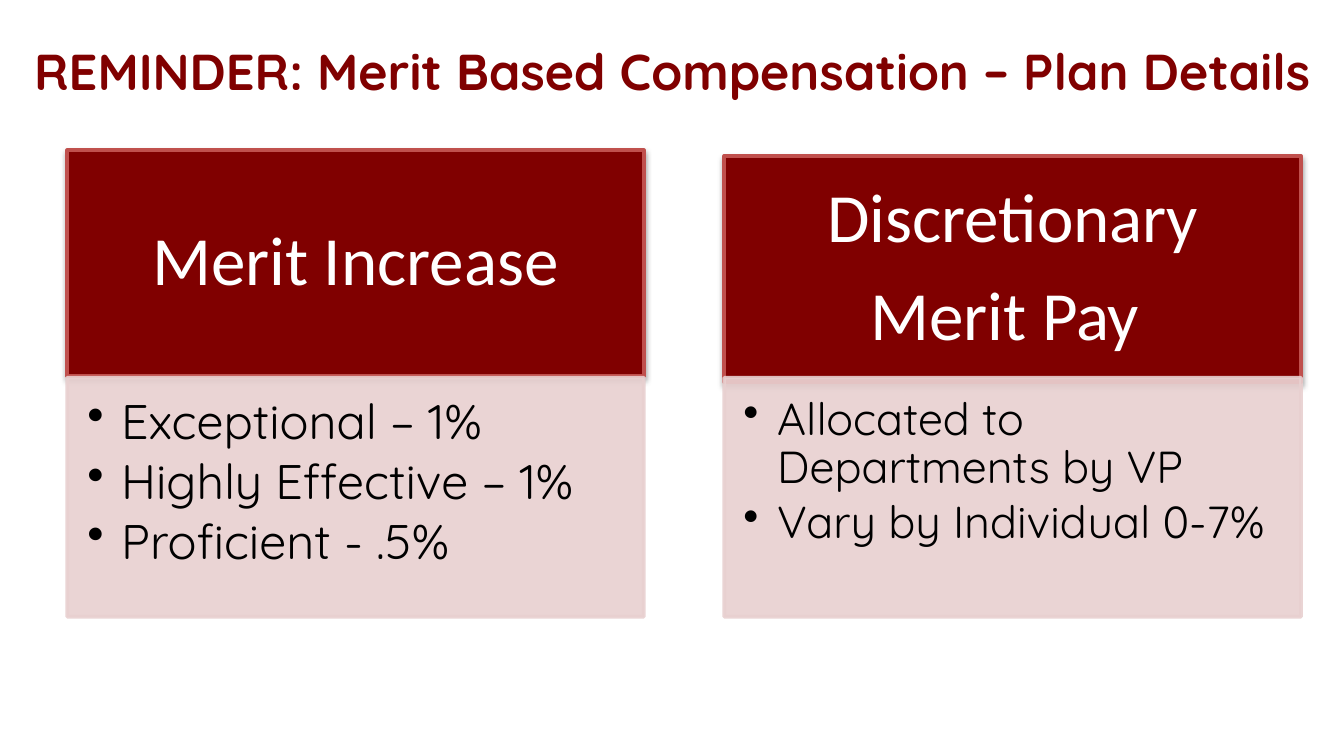
"""Build the merit based compensation slide with its two plan panels."""
from dataclasses import dataclass

import lxml.etree
import pptx
import pptx.dml.color
import pptx.enum.shapes
import pptx.enum.text
import pptx.oxml.ns
import pptx.util
from pptx.util import Cm

RGB = pptx.dml.color.RGBColor
ALIGN = pptx.enum.text.PP_ALIGN
ANCHOR = pptx.enum.text.MSO_ANCHOR
qn = pptx.oxml.ns.qn


@dataclass(frozen=True)
class Theme:
    maroon: RGB = RGB(0x80, 0x00, 0x00)
    border: RGB = RGB(0xC0, 0x50, 0x4D)
    blush: RGB = RGB(0xE8, 0xD0, 0xD0)
    white: RGB = RGB(0xFF, 0xFF, 0xFF)
    black: RGB = RGB(0x00, 0x00, 0x00)
    heading_font: str = "Calibri"
    body_font: str = "Quicksand"
    title_size: float = 27
    heading_size: float = 37
    line_width: float = 2
    line_spacing: float = 0.9


@dataclass(frozen=True)
class Panel:
    left: float
    heading_top: float
    heading: tuple[str, ...]
    details: tuple[str, ...]
    detail_size: float
    detail_insets: tuple[float, float, float, float]


THEME = Theme()
PANEL_WIDTH = 10.9
HEADING_HEIGHT = 4.27
DETAILS_TOP = 7.14
DETAILS_HEIGHT = 4.52
HEADING_INSETS = (0.74, 0.41, 0.74, 0.41)
BULLET_INDENT = 0.64

PANELS = (
    Panel(1.27, 2.84, ("Merit Increase",),
          ("Exceptional – 1%", "Highly Effective – 1%", "Proficient - .5%"),
          26, (0.38, 0.38, 0.51, 0.58)),
    Panel(13.69, 2.95, ("Discretionary", "Merit Pay "),
          ("Allocated to Departments by VP", "Vary by Individual 0-7%"),
          24, (0.36, 0.36, 0.48, 0.53)),
)


def set_font(paragraph, face: str, size: float, color: RGB, bold: bool = False) -> None:
    font = paragraph.font
    font.name, font.size, font.bold = face, pptx.util.Pt(size), bold
    font.color.rgb = color


def add_block(slide, left: float, top: float, height: float, fill: RGB, line: RGB,
              insets: tuple[float, float, float, float], anchor: ANCHOR):
    block = slide.shapes.add_shape(pptx.enum.shapes.MSO_SHAPE.RECTANGLE, Cm(left),
                                   Cm(top), Cm(PANEL_WIDTH), Cm(height))
    block.shadow.inherit = False
    block.fill.solid()
    block.fill.fore_color.rgb = fill
    block.line.color.rgb = line
    block.line.width = pptx.util.Pt(THEME.line_width)
    frame = block.text_frame
    frame.word_wrap = True
    frame.vertical_anchor = anchor
    (frame.margin_left, frame.margin_top,
     frame.margin_right, frame.margin_bottom) = map(Cm, insets)
    return block


def fill_lines(frame, lines: tuple[str, ...], face: str, size: float, color: RGB,
               align: ALIGN, gap: float, bulleted: bool = False) -> None:
    for index, line in enumerate(lines):
        paragraph = frame.add_paragraph() if index else frame.paragraphs[0]
        paragraph.text = line
        paragraph.alignment = align
        paragraph.line_spacing = THEME.line_spacing
        paragraph.space_after = pptx.util.Pt(round(size * gap, 1))
        if bulleted:
            paragraph.level = 1
            properties = paragraph._p.get_or_add_pPr()
            properties.set("marL", str(Cm(BULLET_INDENT)))
            properties.set("indent", str(-Cm(BULLET_INDENT)))
            lxml.etree.SubElement(properties, qn("a:buChar"), char="•")
        set_font(paragraph, face, size, color)


def add_shadow(block) -> None:
    effects = block._element.spPr.find(qn("a:effectLst"))
    shadow = lxml.etree.SubElement(
        effects, qn("a:outerShdw"), blurRad=str(pptx.util.Pt(3.1)),
        dist=str(pptx.util.Pt(1.6)), dir="5400000", rotWithShape="0")
    color = lxml.etree.SubElement(shadow, qn("a:srgbClr"), val=str(THEME.black))
    lxml.etree.SubElement(color, qn("a:alpha"), val="38000")


def make_translucent(block, percent: int) -> None:
    for color in list(block._element.spPr.iter(qn("a:srgbClr"))):
        lxml.etree.SubElement(color, qn("a:alpha"), val=str(percent * 1000))


def add_panel(slide, panel: Panel) -> None:
    heading = add_block(slide, panel.left, panel.heading_top, HEADING_HEIGHT,
                        THEME.maroon, THEME.border, HEADING_INSETS, ANCHOR.MIDDLE)
    add_shadow(heading)
    fill_lines(heading.text_frame, panel.heading, THEME.heading_font,
               THEME.heading_size, THEME.white, ALIGN.CENTER, 0.35)
    details = add_block(slide, panel.left, DETAILS_TOP, DETAILS_HEIGHT, THEME.blush,
                        THEME.blush, panel.detail_insets, ANCHOR.TOP)
    make_translucent(details, 90)
    fill_lines(details.text_frame, panel.details, THEME.body_font,
               panel.detail_size, THEME.black, ALIGN.LEFT, 0.15, bulleted=True)


def add_title(slide, wording: str) -> None:
    title = slide.shapes.title
    title.left, title.top, title.width, title.height = Cm(0), Cm(0.64), Cm(25.4), Cm(2.39)
    frame = title.text_frame
    frame.text = wording
    frame.word_wrap = True
    frame.vertical_anchor = ANCHOR.TOP
    paragraph = frame.paragraphs[0]
    paragraph.alignment = ALIGN.CENTER
    set_font(paragraph, THEME.body_font, THEME.title_size, THEME.maroon, bold=True)


def main() -> None:
    deck = pptx.Presentation()
    deck.slide_width, deck.slide_height = Cm(25.4), Cm(14.29)
    slide = deck.slides.add_slide(deck.slide_layouts[5])
    add_title(slide, "REMINDER: Merit Based Compensation – Plan Details")
    for panel in PANELS:
        add_panel(slide, panel)
    deck.save("out.pptx")


if __name__ == "__main__":
    main()
